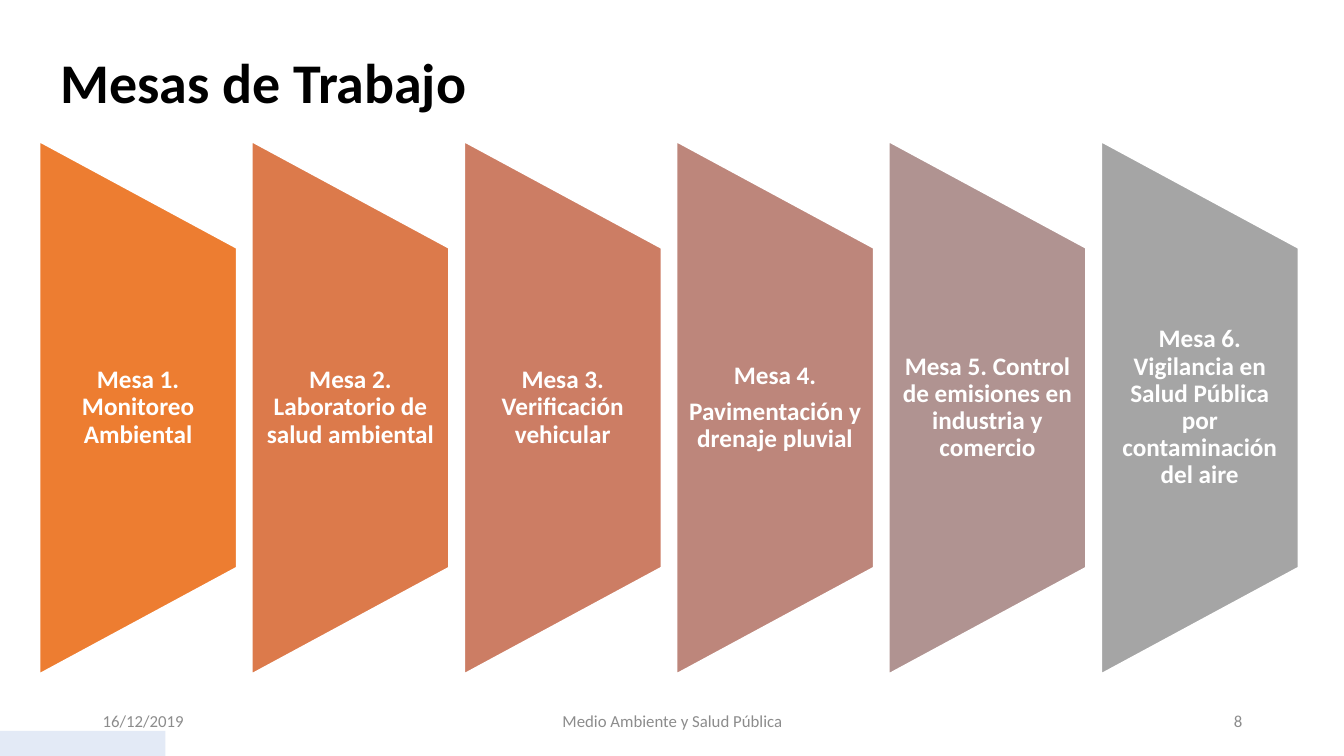
"""Build the "Mesas de Trabajo" slide with six working-group panels."""
from dataclasses import dataclass

from pptx import Presentation
from pptx.dml.color import RGBColor
from pptx.enum.shapes import MSO_SHAPE
from pptx.enum.text import MSO_ANCHOR, PP_ALIGN
from pptx.util import Inches, Pt

RECTANGLE = MSO_SHAPE.RECTANGLE
TRAPEZOID = MSO_SHAPE.FLOWCHART_MANUAL_OPERATION
MIDDLE = MSO_ANCHOR.MIDDLE
LEFT, CENTER, RIGHT = PP_ALIGN.LEFT, PP_ALIGN.CENTER, PP_ALIGN.RIGHT

TITLE = "Mesas de Trabajo"
PANELS = [
    ("ED7D31", ["Mesa 1. Monitoreo Ambiental"]),
    ("DC7A4B", ["Mesa 2. Laboratorio de salud ambiental"]),
    ("CC7D64", ["Mesa 3. Verificación vehicular"]),
    ("BD867B", ["Mesa 4.", "Pavimentación y drenaje pluvial"]),
    ("B09391", ["Mesa 5. Control de emisiones en industria y comercio"]),
    ("A5A5A5", ["Mesa 6. Vigilancia en Salud Pública por contaminación del aire"]),
]
FOOTERS = [
    ("16/12/2019", 0.92, 3, LEFT),
    ("Medio Ambiente y Salud Pública", 4.42, 4.5, CENTER),
    ("8", 9.42, 3, RIGHT),
]

PANEL_LEFT, PANEL_TOP = 0.39, 1.4
PANEL_WIDTH, PANEL_HEIGHT = 1.96, 5.29
PANEL_STEP = 2.106
LABEL_HEIGHT = 3.17


@dataclass(frozen=True)
class Theme:
    font: str = "Calibri"
    title: str = "000000"
    light: str = "FFFFFF"
    footer: str = "8C8C8C"
    accent: str = "E3EAF6"
    title_size: int = 40
    label_size: int = 18
    footer_size: int = 12


THEME = Theme()


def write(shape, lines, size, color, alignment, bold=False, spacing=1.0, gap=0, inset=0.1):
    frame = shape.text_frame
    frame.text = "\n".join(lines)
    frame.word_wrap = True
    frame.vertical_anchor = MIDDLE
    frame.margin_left = frame.margin_right = Inches(inset)
    frame.margin_top = frame.margin_bottom = 0
    for paragraph in frame.paragraphs:
        paragraph.alignment = alignment
        paragraph.line_spacing = spacing
        paragraph.space_after = Pt(gap)
        for run in paragraph.runs:
            run.font.name = THEME.font
            run.font.size = Pt(size)
            run.font.bold = bold
            run.font.color.rgb = RGBColor.from_string(color)


def add_filled(slide, kind, left, top, width, height, color):
    shape = slide.shapes.add_shape(
        kind, Inches(left), Inches(top), Inches(width), Inches(height))
    shape.shadow.inherit = False
    shape.fill.solid()
    shape.fill.fore_color.rgb = RGBColor.from_string(color)
    shape.line.fill.background()
    return shape


def add_text(slide, left, top, width, height):
    return slide.shapes.add_textbox(
        Inches(left), Inches(top), Inches(width), Inches(height))


def add_panel(slide, index, color, lines):
    left = PANEL_LEFT + index * PANEL_STEP
    center_x = left + PANEL_WIDTH / 2
    center_y = PANEL_TOP + PANEL_HEIGHT / 2
    panel = add_filled(slide, TRAPEZOID, center_x - PANEL_HEIGHT / 2,
                       center_y - PANEL_WIDTH / 2, PANEL_HEIGHT, PANEL_WIDTH, color)
    panel.rotation = 270
    panel.line.color.rgb = RGBColor.from_string(THEME.light)
    panel.line.width = Pt(1.5)
    label = add_text(slide, left, center_y - LABEL_HEIGHT / 2, PANEL_WIDTH, LABEL_HEIGHT)
    write(label, lines, THEME.label_size, THEME.light, CENTER,
          bold=True, spacing=0.9, gap=6.3, inset=0.12)


def main():
    presentation = Presentation()
    presentation.slide_width = Inches(13.33)
    presentation.slide_height = Inches(7.5)
    slide = presentation.slides.add_slide(presentation.slide_layouts[5])

    add_filled(slide, RECTANGLE, 0, 7.25, 1.64, 0.25, THEME.accent)
    title = slide.shapes.title
    title.left, title.top = Inches(0.5), Inches(0.2)
    title.width, title.height = Inches(10.25), Inches(1.29)
    write(title, [TITLE], THEME.title_size, THEME.title, LEFT, bold=True, spacing=0.9)

    for index, (color, lines) in enumerate(PANELS):
        add_panel(slide, index, color, lines)
    for text, left, width, alignment in FOOTERS:
        footer = add_text(slide, left, 6.95, width, 0.4)
        write(footer, [text], THEME.footer_size, THEME.footer, alignment)

    presentation.save("out.pptx")


if __name__ == "__main__":
    main()
